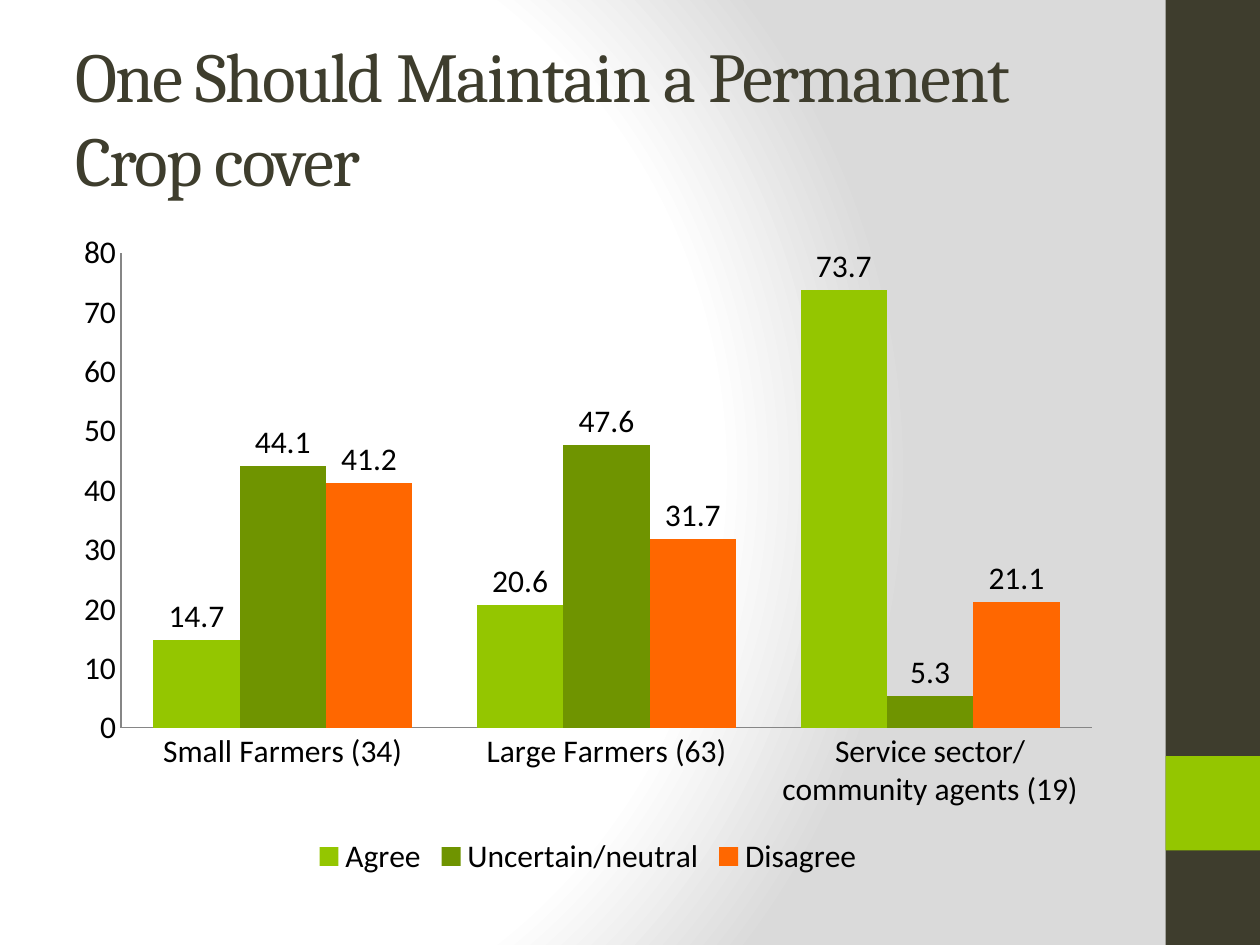
from dataclasses import dataclass

from lxml.etree import SubElement
from pptx import Presentation
from pptx.chart.data import CategoryChartData
from pptx.dml.color import RGBColor
from pptx.enum.chart import (XL_CHART_TYPE, XL_LABEL_POSITION,
                             XL_LEGEND_POSITION, XL_TICK_MARK)
from pptx.enum.shapes import MSO_SHAPE
from pptx.enum.text import MSO_ANCHOR
from pptx.oxml.ns import qn
from pptx.util import Pt


@dataclass(frozen=True)
class Theme:
    dark: str = "3E3D2D"
    lime: str = "94C600"
    moss: str = "6F9400"
    flame: str = "FF6700"
    ink: str = "000000"
    line: str = "868686"
    white: str = "FFFFFF"
    mist: str = "DADADA"
    head: str = "Cambria"
    body: str = "Calibri"
    big: int = 40
    small: int = 18


THEME = Theme()

CATS = ["Small Farmers (34)", "Large Farmers (63)",
        "Service sector/ community agents (19)"]
ROWS = [
    ("Agree", (14.7, 20.6, 73.7), THEME.lime),
    ("Uncertain/neutral", (44.1, 47.6, 5.3), THEME.moss),
    ("Disagree", (41.2, 31.7, 21.1), THEME.flame),
]


def rgb(code):
    return RGBColor.from_string(code)


def style(item, **vals):
    for key, val in vals.items():
        setattr(item, key, val)


def paint(fill, code):
    fill.solid()
    fill.fore_color.rgb = rgb(code)


def set_back(slide):
    """Round gradient that darkens toward the right."""
    slide.background.fill.gradient()
    grad = next(slide._element.iter(qn("a:gradFill")))
    for part in list(grad):
        grad.remove(part)
    stops = SubElement(grad, qn("a:gsLst"))
    for pos, code in ((0, THEME.white), (75, THEME.white), (100, THEME.mist)):
        stop = SubElement(stops, qn("a:gs"), pos=str(pos * 1000))
        SubElement(stop, qn("a:srgbClr"), val=code)
    way = SubElement(grad, qn("a:path"), path="circle")
    SubElement(way, qn("a:fillToRect"),
               l="20000", t="50000", r="100000", b="50000")


def add_band(slide, x, y, w, h):
    """Dark side band with a lime square at four fifths of its height."""
    for top, tall, code in ((y, h, THEME.dark), (y + h * 0.8, w, THEME.lime)):
        box = slide.shapes.add_shape(
            MSO_SHAPE.RECTANGLE, Pt(x), Pt(top), Pt(w), Pt(tall))
        box.shadow.inherit = False
        box.line.fill.background()
        paint(box.fill, code)


def add_title(slide, x, y, w, h, text):
    box = slide.shapes.add_textbox(Pt(x), Pt(y), Pt(w), Pt(h))
    frame = box.text_frame
    style(frame, word_wrap=True, vertical_anchor=MSO_ANCHOR.MIDDLE)
    run = frame.paragraphs[0].add_run()
    run.text = text
    style(run.font, name=THEME.head, size=Pt(THEME.big))
    run.font.color.rgb = rgb(THEME.dark)
    run.font._element.set("spc", "-100")


def add_bars(slide, x, y, w, h):
    data = CategoryChartData(number_format="General")
    data.categories = CATS
    for name, vals, _ in ROWS:
        data.add_series(name, vals)
    chart = slide.shapes.add_chart(
        XL_CHART_TYPE.COLUMN_CLUSTERED, Pt(x), Pt(y), Pt(w), Pt(h), data).chart
    style(chart, has_title=False, has_legend=True)
    style(chart.font, name=THEME.body, size=Pt(THEME.small))
    chart.font.color.rgb = rgb(THEME.ink)
    style(chart.legend, position=XL_LEGEND_POSITION.BOTTOM,
          include_in_layout=False)

    # Axes
    for axis in (chart.category_axis, chart.value_axis):
        style(axis, has_major_gridlines=False,
              major_tick_mark=XL_TICK_MARK.NONE,
              minor_tick_mark=XL_TICK_MARK.NONE)
        axis.format.line.color.rgb = rgb(THEME.line)
        axis.format.line.width = Pt(0.75)
    style(chart.value_axis, minimum_scale=0, maximum_scale=80, major_unit=10)

    # Columns and their labels
    plot = chart.plots[0]
    style(plot, gap_width=75, overlap=0, vary_by_categories=False)
    for bars, (_, _, code) in zip(plot.series, ROWS):
        paint(bars.format.fill, code)
        bars.invert_if_negative = False
        style(bars.data_labels, show_value=True,
              position=XL_LABEL_POSITION.OUTSIDE_END)


def main():
    deck = Presentation()
    style(deck, slide_width=Pt(720), slide_height=Pt(540))
    slide = deck.slides.add_slide(deck.slide_layouts[6])
    set_back(slide)
    add_band(slide, 666, 0, 54, 540)
    add_title(slide, 36, 21.6, 600, 90,
              "One Should Maintain a Permanent Crop cover")
    add_bars(slide, 36, 126, 600, 378)
    deck.save("out.pptx")


if __name__ == "__main__":
    main()
